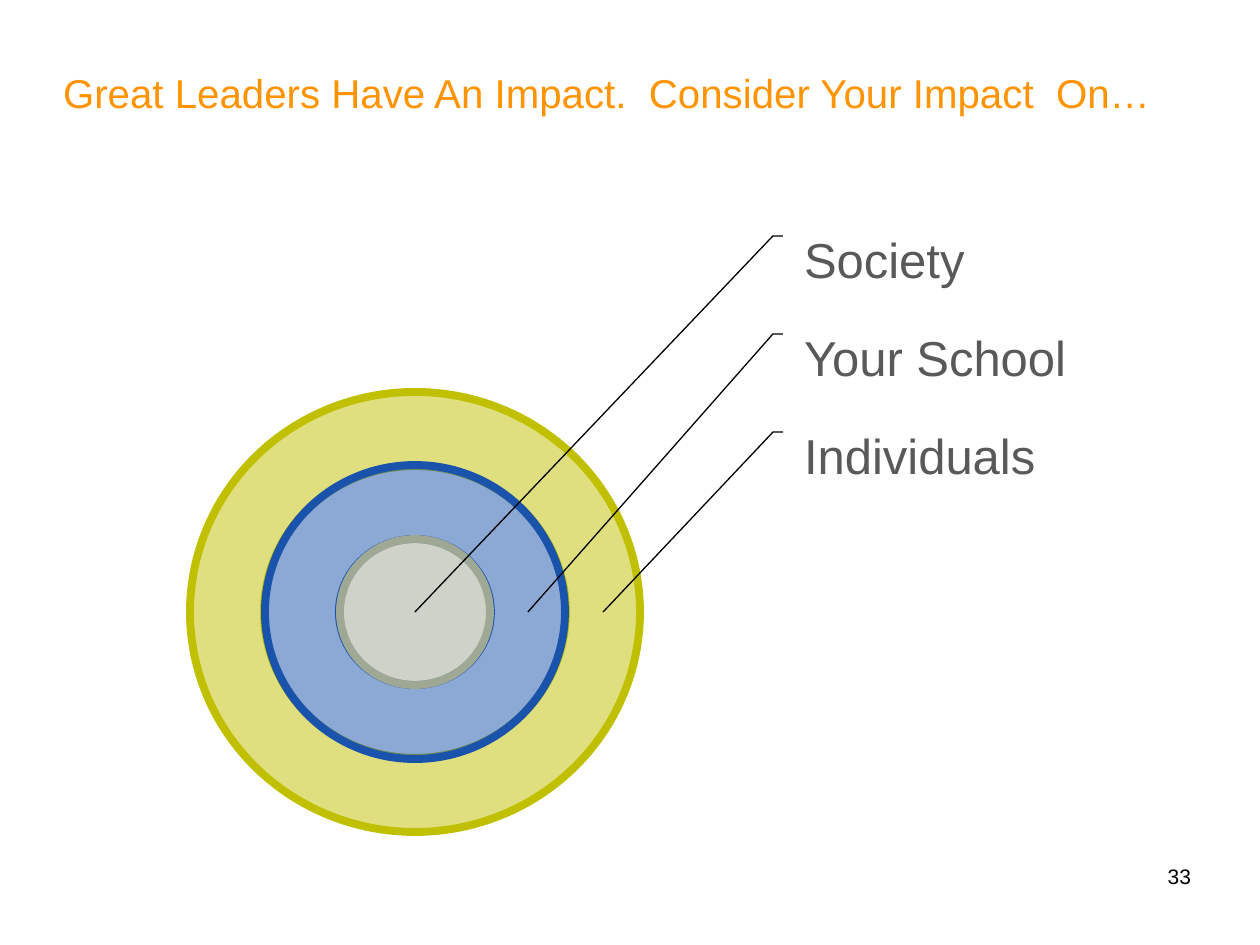
from dataclasses import dataclass

from lxml import etree
from pptx import Presentation
from pptx.dml.color import RGBColor
from pptx.enum.shapes import MSO_SHAPE
from pptx.enum.text import MSO_ANCHOR, PP_ALIGN
from pptx.oxml.ns import qn
from pptx.util import Emu, Pt

DONUT, OVAL = MSO_SHAPE.DONUT, MSO_SHAPE.OVAL
TOP, MIDDLE = MSO_ANCHOR.TOP, MSO_ANCHOR.MIDDLE
LEFT, RIGHT = PP_ALIGN.LEFT, PP_ALIGN.RIGHT
PX_PER_INCH = 126
EMU_PER_PX = 914400 / PX_PER_INCH


@dataclass(frozen=True)
class Theme:
    font: str = "Arial"
    title: str = "FF9300"
    label: str = "595959"
    ink: str = "000000"
    title_size: int = 23
    label_size: int = 28
    number_size: int = 12
    ring_line: float = 4.5
    leader_line: float = 0.75
    ring_opacity: int = 50


THEME = Theme()

# label, ring colour, horizontal and vertical radius, from outside to inside
RINGS = [
    ("Individuals", "C0C000", 225, 220),
    ("Your School", "1A53AB", 150, 147),
    ("Society", "9FA795", 75, 73),
]
RING_WIDTH = 74
LABEL_STEP = 98


def px(length):
    return Emu(round(length * EMU_PER_PX))


def add_text(page, box, text, size, color, anchor=TOP, align=LEFT, inset=0, wrap=True):
    shape = page.shapes.add_textbox(*map(px, box))
    frame = shape.text_frame
    frame.word_wrap = wrap
    frame.vertical_anchor = anchor
    frame.margin_left = frame.margin_right = px(inset)
    frame.margin_top = frame.margin_bottom = px(inset)
    para = frame.paragraphs[0]
    para.alignment = align
    span = para.add_run()
    span.text = text
    span.font.name = THEME.font
    span.font.size = Pt(size)
    span.font.color.rgb = RGBColor.from_string(color)


def set_line(shape, color, width):
    shape.shadow.inherit = False
    shape.line.color.rgb = RGBColor.from_string(color)
    shape.line.width = Pt(width)


def add_ring(page, center, radii, color, solid):
    """Draw a translucent ring, or a full disc when solid."""
    (x, y), (across, down) = center, radii
    box = (x - across, y - down, 2 * across, 2 * down)
    ring = page.shapes.add_shape(OVAL if solid else DONUT, *map(px, box))
    if not solid:
        ring.adjustments[0] = RING_WIDTH / (2 * min(radii))
    ring.fill.solid()
    ring.fill.fore_color.rgb = RGBColor.from_string(color)
    tint = ring.fill._xPr.find(qn("a:solidFill"))[0]
    etree.SubElement(tint, qn("a:alpha"), val=str(THEME.ring_opacity * 1000))
    set_line(ring, color, THEME.ring_line)


def add_leader(page, points):
    start, *others = points
    builder = page.shapes.build_freeform(*start, scale=EMU_PER_PX)
    builder.add_line_segments(others, close=False)
    leader = builder.convert_to_shape()
    leader.fill.background()
    set_line(leader, THEME.ink, THEME.leader_line)


def add_target(page, box):
    """Place the rings at the lower left of the box and their labels at the upper right."""
    left, top, width, height = box
    outer_across, outer_down = RINGS[0][2:]
    center = (left + outer_across, top + height - outer_down)
    label_left = left + 604
    for index, (label, color, across, down) in enumerate(RINGS):
        row_top = top + LABEL_STEP * (len(RINGS) - 1 - index)
        solid = index == len(RINGS) - 1
        add_ring(page, center, (across, down), color, solid)
        reach = 0 if solid else across - RING_WIDTH // 2
        leader_y = row_top + 16
        add_leader(page, [
            (center[0] + reach, center[1]),
            (label_left - 21, leader_y),
            (label_left - 11, leader_y),
        ])
        add_text(page, (label_left, row_top, left + width - label_left, 78), label,
                 THEME.label_size, THEME.label, inset=10, wrap=False)


def add_title(page, box):
    add_text(page, box, "Great Leaders Have An Impact.  Consider Your Impact  On…",
             THEME.title_size, THEME.title, anchor=MIDDLE)


def add_page_number(page, box):
    add_text(page, box, "33", THEME.number_size, THEME.ink,
             anchor=MIDDLE, align=RIGHT, inset=6)


def main():
    deck = Presentation()
    deck.slide_width, deck.slide_height = px(1260), px(945)
    page = deck.slides.add_slide(deck.slide_layouts[6])
    add_title(page, (63, 38, 1116, 108))
    add_target(page, (190, 220, 901, 612))
    add_page_number(page, (903, 851, 294, 50))
    deck.save("out.pptx")


if __name__ == "__main__":
    main()
